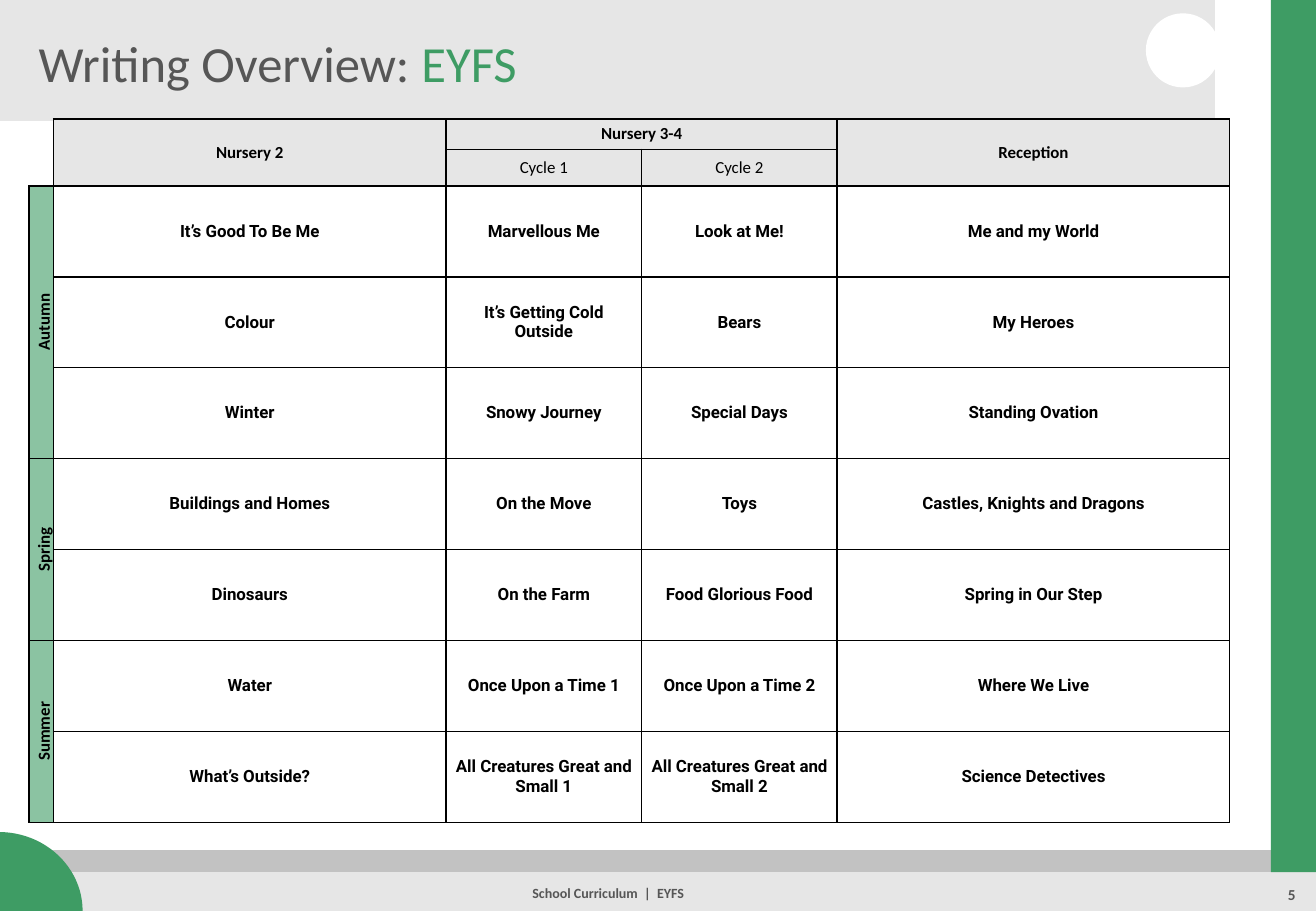
from lxml import etree
from pptx import Presentation
from pptx.dml.color import RGBColor
from pptx.enum import shapes, text
from pptx.oxml import ns
from pptx.util import Inches, Pt

GREEN = RGBColor(0x3E, 0x9C, 0x64)
SILVER = RGBColor(0xC2, 0xC2, 0xC2)
PALE = RGBColor(0xE6, 0xE6, 0xE6)
WHITE = RGBColor(0xFF, 0xFF, 0xFF)
SLATE = RGBColor(0x56, 0x56, 0x56)
BLACK = RGBColor(0, 0, 0)

SLIDE_WIDTH, SLIDE_HEIGHT = 10.83, 7.5


def write(frame, runs, size, align, bold=False, font="Calibri"):
    """Fill the first paragraph with (wording, colour) runs, centred vertically."""
    frame.word_wrap = True
    paragraph = frame.paragraphs[0]
    paragraph.alignment = align
    for wording, colour in runs:
        run = paragraph.add_run()
        run.text = wording
        run.font.name = font
        run.font.size = Pt(size)
        run.font.bold = bold
        run.font.color.rgb = colour
    return paragraph


def set_borders(cell, visible):
    """Draw the named sides (L, R, T, B) in black and hide the others."""
    properties = cell._tc.get_or_add_tcPr()
    for position, side in enumerate("LRTB"):
        line = etree.Element(ns.qn(f"a:ln{side}"), w=str(Pt(1)))
        if side in visible:
            fill = etree.SubElement(line, ns.qn("a:solidFill"))
            etree.SubElement(fill, ns.qn("a:srgbClr"), val=str(BLACK))
        else:
            etree.SubElement(line, ns.qn("a:noFill"))
        properties.insert(position, line)


presentation = Presentation()
presentation.slide_width = Inches(SLIDE_WIDTH)
presentation.slide_height = Inches(SLIDE_HEIGHT)
slide = presentation.slides.add_slide(presentation.slide_layouts[6])

# Frame, camera-shaped tab and title banner
outlines = [
    (SILVER, [[(0, 0), (SLIDE_WIDTH, 0), (SLIDE_WIDTH, SLIDE_HEIGHT), (0, SLIDE_HEIGHT)],
              [(0.1, 0.1), (0.1, 7.41), (10.73, 7.41), (10.73, 0.1)]]),
    (PALE, [[(9.14, 0.81), (10.3, 0.81), (10.28, 0), (9.17, 0)]]),
    (PALE, [[(0, 0.2), (0, 0.81), (8.87, 0.81), (8.77, 0.21)]]),
]
for colour, contours in outlines:
    builder = slide.shapes.build_freeform(*contours[0][0], scale=Inches(1))
    for index, contour in enumerate(contours):
        if index:
            builder.move_to(*contour[0])
        builder.add_line_segments(contour[1:], close=True)
    shape = builder.convert_to_shape()
    shape.shadow.inherit = False
    shape.fill.solid()
    shape.fill.fore_color.rgb = colour
    shape.line.fill.background()

# Footer line
line = slide.shapes.add_connector(
    shapes.MSO_CONNECTOR.STRAIGHT,
    Inches(0.05), Inches(7.13), Inches(SLIDE_WIDTH), Inches(7.13))
line.line.color.rgb = SILVER
line.line.width = Pt(7)
etree.SubElement(line._element.spPr, ns.qn("a:effectLst"))

# Lens, footer band, corner quarter and side bar
presets = [
    (shapes.MSO_SHAPE.OVAL, 9.43, 0.11, 0.61, 0.61, WHITE),
    (shapes.MSO_SHAPE.RECTANGLE, 0.32, 7.18, 10.51, 0.32, PALE),
    (shapes.MSO_SHAPE.ARC, -0.7, 6.85, 1.38, 1.3, GREEN),
    (shapes.MSO_SHAPE.RECTANGLE, 10.46, 0, 0.37, 7.18, GREEN),
]
for preset, left, top, width, height, colour in presets:
    shape = slide.shapes.add_shape(
        preset, Inches(left), Inches(top), Inches(width), Inches(height))
    shape.shadow.inherit = False
    shape.fill.solid()
    shape.fill.fore_color.rgb = colour
    shape.line.fill.background()

# Title, footer and page number
CENTER, LEFT = text.PP_ALIGN.CENTER, text.PP_ALIGN.LEFT
labels = [
    (0.22, 0.26, 8.42, 0.5, [("Writing Overview: ", SLATE), ("EYFS", GREEN)], 30, LEFT, False, 1),
    (2.05, 7.21, 5.91, 0.3, [("School Curriculum  |  EYFS", SLATE)], 8.3, CENTER, True, 0.9),
    (10.43, 7.21, 0.4, 0.28, [("5", SLATE)], 9, CENTER, True, 1.2),
]
for left, top, width, height, runs, size, align, bold, spacing in labels:
    box = slide.shapes.add_textbox(Inches(left), Inches(top), Inches(width), Inches(height))
    box.text_frame.vertical_anchor = text.MSO_ANCHOR.MIDDLE
    write(box.text_frame, runs, size, align, bold).line_spacing = spacing

# Overview table
headings = {(0, 1): "Nursery 2", (0, 2): "Nursery 3-4", (0, 4): "Reception",
            (1, 2): "Cycle 1", (1, 3): "Cycle 2"}
seasons = {2: "Autumn", 5: "Spring", 7: "Summer"}
topics = [
    ["It’s Good To Be Me", "Marvellous Me", "Look at Me!", "Me and my World"],
    ["Colour", "It’s Getting Cold Outside", "Bears", "My Heroes"],
    ["Winter", "Snowy Journey", "Special Days", "Standing Ovation"],
    ["Buildings and Homes", "On the Move", "Toys", "Castles, Knights and Dragons"],
    ["Dinosaurs", "On the Farm", "Food Glorious Food", "Spring in Our Step"],
    ["Water", "Once Upon a Time 1", "Once Upon a Time 2", "Where We Live"],
    ["What’s Outside?", "All Creatures Great and Small 1",
     "All Creatures Great and Small 2", "Science Detectives"],
]
column_widths = [0.2, 3.23, 1.61, 1.61, 3.23]
row_heights = [0.25] * 2 + [5.24 / len(topics)] * len(topics)
table = slide.shapes.add_table(
    len(row_heights), len(column_widths), Inches(0.24), Inches(0.98),
    Inches(sum(column_widths)), Inches(sum(row_heights))).table
table.first_row = table.horz_banding = False
for column, width in zip(table.columns, column_widths):
    column.width = Inches(width)
for row, height in zip(table.rows, row_heights):
    row.height = Inches(height)

merges = [((0, 0), (1, 0)), ((0, 1), (1, 1)), ((0, 2), (0, 3)), ((0, 4), (1, 4)),
          ((2, 0), (4, 0)), ((5, 0), (6, 0)), ((7, 0), (8, 0))]
for first, last in merges:
    table.cell(*first).merge(table.cell(*last))

for row in range(len(row_heights)):
    for column in range(len(column_widths)):
        cell = table.cell(row, column)
        is_heading = row < 2
        is_season = column == 0 and not is_heading
        is_corner = column == 0 and is_heading
        cell.vertical_anchor = text.MSO_ANCHOR.MIDDLE
        cell.margin_left = cell.margin_right = Inches(0.04 if is_season else 0.06)
        cell.margin_top = cell.margin_bottom = Inches(0.04 if is_season else 0)
        if is_corner or not (is_heading or is_season):
            cell.fill.background()
        else:
            cell.fill.solid()
            cell.fill.fore_color.rgb = GREEN if is_season else PALE
        if is_season:
            properties = cell._tc.tcPr
            properties.set("vert", "vert270")
            green = properties.find(".//" + ns.qn("a:srgbClr"))
            etree.SubElement(green, ns.qn("a:alpha"), val="60000")
        set_borders(cell, "RB" if is_corner else "LRTB")

        if is_heading:
            wording = headings.get((row, column), "")
        elif is_season:
            wording = seasons.get(row, "")
        else:
            wording = topics[row - 2][column - 1]
        if wording:
            font = "Calibri" if is_heading or is_season else "Roboto"
            write(cell.text_frame, [(wording, BLACK)], 10, CENTER, row != 1, font)

presentation.save("out.pptx")
